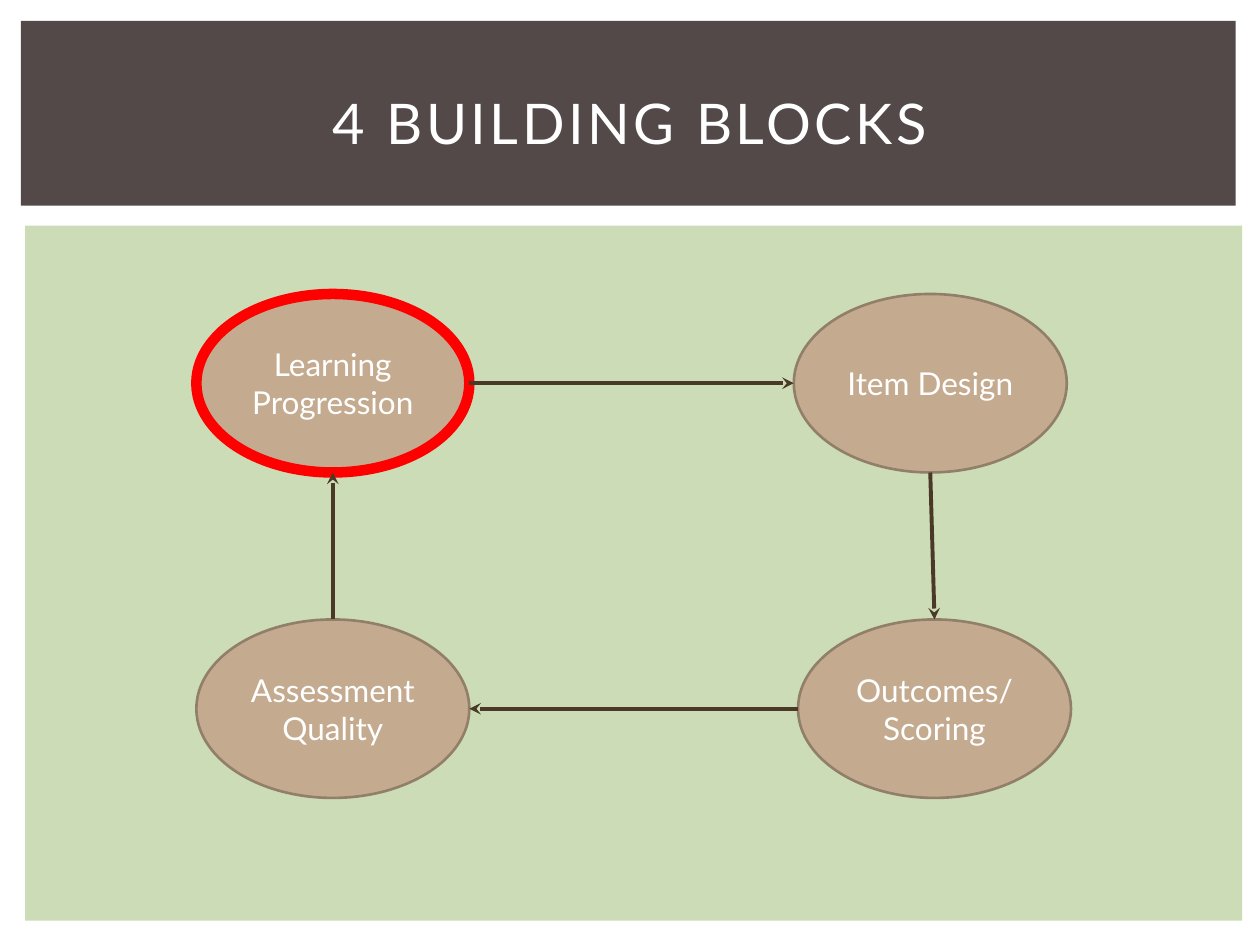
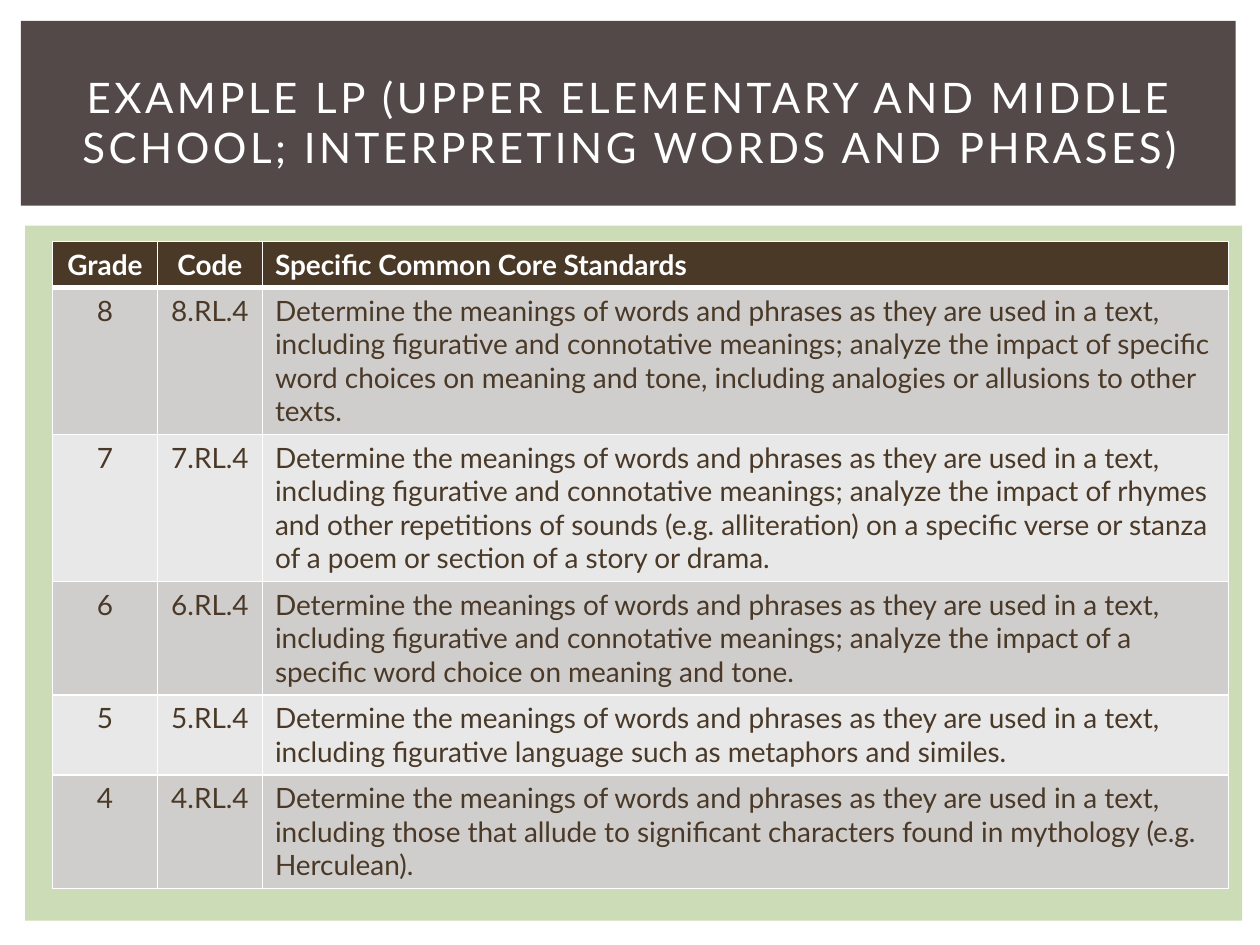
from lxml.etree import SubElement
from pptx import Presentation
from pptx.dml.color import RGBColor
from pptx.enum.shapes import MSO_CONNECTOR as Connector, MSO_SHAPE as Shape
from pptx.enum.text import MSO_ANCHOR as Anchor, PP_ALIGN as Align
from pptx.oxml.ns import qn
from pptx.util import Inches, Pt

# Square grid: 12 columns by 9 rows on a 10 x 7.5 inch page
COLUMNS, ROWS = 12, 9
UNIT = 10 / COLUMNS
FONT = "Lato"
WHITE, GREEN, DARK = "FFFFFF", "CBDCB6", "534949"
TAN, TAN_EDGE, BROWN, RED = "C4AB8F", "917F6A", "4A3927", "FF0000"
BANDS = ("D0CECD", "E9E8E8")


def color(value):
    return RGBColor.from_string(value)


def grid(units):
    return Inches(units * UNIT)


class SlideBuilder:
    """Holds the shared style and the slide being built."""

    def __init__(self):
        self.deck = Presentation()
        self.deck.slide_width = grid(COLUMNS)
        self.deck.slide_height = grid(ROWS)
        self.page = None

    def new_page(self, title, size):
        self.page = self.deck.slides.add_slide(self.deck.slide_layouts[6])
        self.shape(Shape.RECTANGLE, 0.24, 2.15, 11.59, 6.62, GREEN)
        self.shape(Shape.RECTANGLE, 0.2, 0.2, 11.57, 1.76, DARK)
        box = self.page.shapes.add_textbox(*map(grid, (0.5, 0.47, 11, 1.38)))
        self.set_text(box.text_frame, title, size)
        span = box.text_frame.paragraphs[0].runs[0]
        span.font._element.set("spc", "200")

    def set_text(self, frame, text, size, ink=WHITE, align=Align.CENTER,
                 anchor=Anchor.MIDDLE, bold=False):
        frame.word_wrap = True
        frame.vertical_anchor = anchor
        frame.text = text
        para = frame.paragraphs[0]
        para.alignment = align
        para.font.name, para.font.size, para.font.bold = FONT, Pt(size), bold
        para.font.color.rgb = color(ink)

    def shape(self, kind, left, top, width, height, fill, edge=None, weight=1.5):
        shape = self.page.shapes.add_shape(
            kind, *map(grid, (left, top, width, height)))
        shape.shadow.inherit = False
        shape.fill.solid()
        shape.fill.fore_color.rgb = color(fill)
        if edge:
            shape.line.color.rgb = color(edge)
            shape.line.width = Pt(weight)
        else:
            shape.line.fill.background()
        return shape

    def block(self, text, left, top, width, height, edge=TAN_EDGE, weight=1.5):
        oval = self.shape(Shape.OVAL, left, top, width, height, TAN, edge, weight)
        self.set_text(oval.text_frame, text, 18)
        return oval

    def arrow(self, start, end):
        line = self.page.shapes.add_connector(Connector.STRAIGHT, *start, *end)
        line.line.color.rgb = color(BROWN)
        line.line.width = Pt(2.25)
        SubElement(line.line._get_or_add_ln(), qn("a:tailEnd"), type="stealth")
        SubElement(line._element.spPr, qn("a:effectLst"))

    def borders(self, cell, top, bottom):
        properties = cell._tc.get_or_add_tcPr()
        for side, weight in (("L", 1), ("R", 1), ("T", top), ("B", bottom)):
            line = SubElement(properties, qn(f"a:ln{side}"), w=str(Pt(weight)))
            fill = SubElement(line, qn("a:solidFill"))
            SubElement(fill, qn("a:srgbClr"), val=WHITE)

    def table(self, left, top, widths, heights, records):
        table = self.page.shapes.add_table(
            len(records), len(widths), grid(left), grid(top),
            grid(sum(widths)), Inches(sum(heights))).table
        for column, width in zip(table.columns, widths):
            column.width = grid(width)
        for index, (record, height) in enumerate(zip(records, heights)):
            table.rows[index].height = Inches(height)
            header = index == 0
            for position, text in enumerate(record):
                cell = table.cell(index, position)
                self.borders(cell, 3 if index == 1 else 1, 3 if header else 1)
                cell.fill.solid()
                cell.fill.fore_color.rgb = color(
                    BROWN if header else BANDS[(index - 1) % 2])
                cell.vertical_anchor = Anchor.TOP
                self.set_text(cell.text_frame, text, 16,
                              WHITE if header else BROWN,
                              Align.LEFT if position == 2 else Align.CENTER,
                              Anchor.TOP, header)


def middle(oval, across, down):
    """Point at the given shares of an oval's width and height."""
    return (oval.left + int(oval.width * across),
            oval.top + int(oval.height * down))


def building_blocks(builder):
    builder.new_page("4 BUILDING BLOCKS", 32)
    size = (2.6, 1.7)
    upper, lower = 2.8, 5.9
    progression = builder.block("Learning Progression", 1.87, upper, *size, RED, 6)
    design = builder.block("Item Design", 7.56, upper, *size)
    outcomes = builder.block("Outcomes/Scoring", 7.6, lower, *size)
    quality = builder.block("Assessment Quality", 1.87, lower, *size)

    # Clockwise cycle
    left, right, top, bottom = (0, 0.5), (1, 0.5), (0.5, 0), (0.5, 1)
    for source, leaving, target, entering in (
            (progression, right, design, left),
            (design, bottom, outcomes, top),
            (outcomes, left, quality, right),
            (quality, top, progression, bottom)):
        builder.arrow(middle(source, *leaving), middle(target, *entering))


def learning_progression(builder):
    builder.new_page("EXAMPLE LP (UPPER ELEMENTARY AND MIDDLE SCHOOL; "
                     "INTERPRETING WORDS AND PHRASES)", 24)
    common = ("Determine the meanings of words and phrases as they are used "
              "in a text, including ")
    impact = "figurative and connotative meanings; analyze the impact of "
    # Grade, number of text lines, end of the standard
    standards = (
        (8, 4, impact + "specific word choices on meaning and tone, including "
               "analogies or allusions to other texts."),
        (7, 4, impact + "rhymes and other repetitions of sounds (e.g. "
               "alliteration) on a specific verse or stanza of a poem or "
               "section of a story or drama."),
        (6, 3, impact + "a specific word choice on meaning and tone."),
        (5, 2, "figurative language such as metaphors and similes."),
        (4, 3, "those that allude to significant characters found in "
               "mythology (e.g. Herculean)."),
    )
    records = [("Grade", "Code", "Specific Common Core Standards")]
    records += [(str(grade), f"{grade}.RL.4", common + ending)
                for grade, _, ending in standards]
    line_counts = [1] + [lines for _, lines, _ in standards]
    heights = [0.1 + 0.265 * lines for lines in line_counts]
    builder.table(0.5, 2.3, (1, 1, 9.2), heights, records)


def main():
    builder = SlideBuilder()
    building_blocks(builder)
    learning_progression(builder)
    builder.deck.save("out.pptx")


if __name__ == "__main__":
    main()
